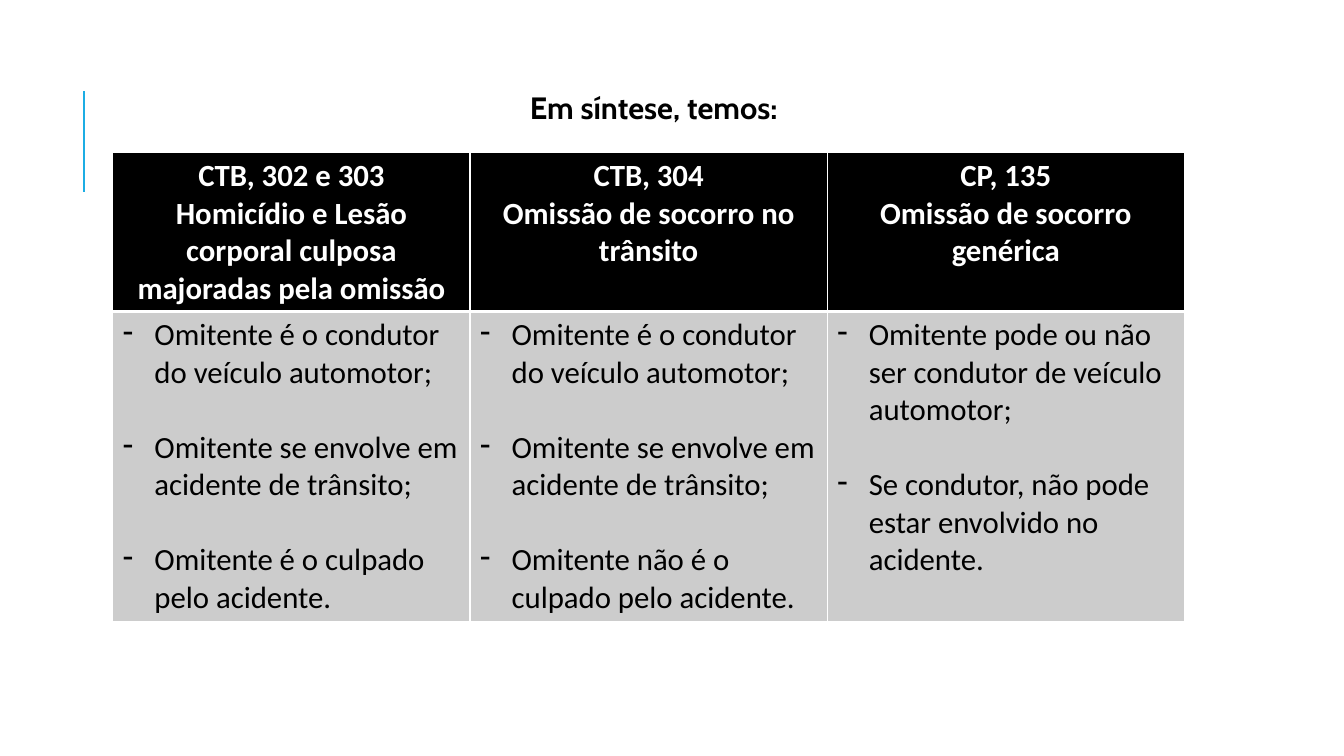
"""Build the slide comparing three failure-to-assist offences."""
from lxml import etree
from pptx import Presentation
from pptx import util as u
from pptx.dml.color import RGBColor
from pptx.enum import shapes, text
from pptx.oxml import ns

COLORS = {"accent": "1CADE4", "black": "000000", "white": "FFFFFF", "body": "CCCCCC"}
LEFT, WIDTH = 80.64, 765.36
ROW_HEIGHTS = (113.6, 221.4)
TEXT_SIZE = 22
LINE_GAP = 26.85
DASH_INDENT = 22.5

AUTOMOTOR = "Omitente é o condutor do veículo automotor;"
ACIDENTE = "Omitente se envolve em acidente de trânsito;"
OFFENCES = [
    (
        ["CTB, 302 e 303", "Homicídio e Lesão corporal culposa majoradas pela omissão"],
        [AUTOMOTOR, ACIDENTE, "Omitente é o culpado pelo acidente."],
    ),
    (
        ["CTB, 304", "Omissão de socorro no trânsito"],
        [AUTOMOTOR, ACIDENTE, "Omitente não é o culpado pelo acidente."],
    ),
    (
        ["CP, 135", "Omissão de socorro genérica"],
        [
            "Omitente pode ou não ser condutor de veículo automotor;",
            "Se condutor, não pode estar envolvido no acidente.",
        ],
    ),
]


def rgb(name):
    """Return the named colour."""
    return RGBColor.from_string(COLORS[name])


def set_attributes(target, values):
    """Set each attribute of the target from a dict."""
    for key, value in values.items():
        setattr(target, key, value)


def write_paragraph(paragraph, words, color, font, layout):
    """Write one formatted run and lay out its paragraph."""
    run = paragraph.add_run()
    run.text = words
    set_attributes(run.font, {"size": u.Pt(TEXT_SIZE), **font})
    run.font.color.rgb = rgb(color)
    set_attributes(paragraph, layout)


def add_dash(paragraph):
    """Give the paragraph a hanging dash bullet."""
    properties = paragraph._p.get_or_add_pPr()
    properties.set("marL", str(u.Pt(DASH_INDENT)))
    properties.set("indent", str(-u.Pt(DASH_INDENT)))
    etree.SubElement(properties, ns.qn("a:buChar"), char="-")


def add_borders(cell, widths):
    """Draw white cell borders, given widths by side."""
    properties = cell._tc.get_or_add_tcPr()
    for position, (side, width) in enumerate(widths.items()):
        border = etree.Element(ns.qn(f"a:ln{side}"), w=str(u.Pt(width)))
        fill = etree.SubElement(border, ns.qn("a:solidFill"))
        etree.SubElement(fill, ns.qn("a:srgbClr"), val=COLORS["white"])
        properties.insert(position, border)


def fill_cell(cell, lines, is_header):
    """Fill a header or body cell with its paragraphs."""
    cell.fill.solid()
    cell.fill.fore_color.rgb = rgb("black" if is_header else "body")
    heavy_side = "B" if is_header else "T"
    add_borders(cell, {side: 3 if side == heavy_side else 1 for side in "LRTB"})
    color = "white" if is_header else "black"
    align = text.PP_ALIGN.CENTER if is_header else text.PP_ALIGN.LEFT
    for index, words in enumerate(lines):
        frame = cell.text_frame
        paragraph = frame.add_paragraph() if index else frame.paragraphs[0]
        gap = LINE_GAP if index and not is_header else 0
        write_paragraph(paragraph, words, color, {"name": "Calibri", "bold": is_header},
                        {"alignment": align, "space_before": u.Pt(gap)})
        if not is_header:
            add_dash(paragraph)


def add_accent_line(slide):
    """Draw the vertical accent line."""
    accent = slide.shapes.add_connector(
        shapes.MSO_CONNECTOR.STRAIGHT, u.Pt(60), u.Pt(136.8), u.Pt(60), u.Pt(64.8))
    accent.line.color.rgb = rgb("accent")
    accent.line.width = u.Pt(1.5)
    etree.SubElement(accent._element.spPr, ns.qn("a:effectLst"))


def add_heading(slide, words):
    """Add the centred heading."""
    heading = slide.shapes.add_textbox(u.Pt(LEFT), u.Pt(62.64), u.Pt(WIDTH), u.Pt(40))
    set_attributes(heading.text_frame, {
        "word_wrap": True, "margin_left": u.Pt(10.8), "margin_right": u.Pt(3.6),
        "margin_top": u.Pt(3.6), "margin_bottom": u.Pt(3.6)})
    write_paragraph(heading.text_frame.paragraphs[0], words, "black",
                    {"name": "Cabin", "bold": True},
                    {"alignment": text.PP_ALIGN.CENTER, "line_spacing": 0.9,
                     "space_before": u.Pt(12), "space_after": u.Pt(2)})


def add_offence_table(slide, offences):
    """Add the table with one column per offence."""
    table = slide.shapes.add_table(
        len(ROW_HEIGHTS), len(offences), u.Pt(LEFT), u.Pt(108.9),
        u.Pt(WIDTH), u.Pt(sum(ROW_HEIGHTS))).table
    table.horz_banding = False
    for row, height in zip(table.rows, ROW_HEIGHTS):
        row.height = u.Pt(height)
    for column, (title, conditions) in enumerate(offences):
        table.columns[column].width = u.Pt(WIDTH / len(offences))
        fill_cell(table.cell(0, column), title, True)
        fill_cell(table.cell(1, column), conditions, False)


def main():
    """Build and save the presentation."""
    presentation = Presentation()
    set_attributes(presentation, {"slide_width": u.Pt(960), "slide_height": u.Pt(540)})
    slide = presentation.slides.add_slide(presentation.slide_layouts[6])
    add_accent_line(slide)
    add_heading(slide, "Em síntese, temos:")
    add_offence_table(slide, OFFENCES)
    presentation.save("out.pptx")


if __name__ == "__main__":
    main()
